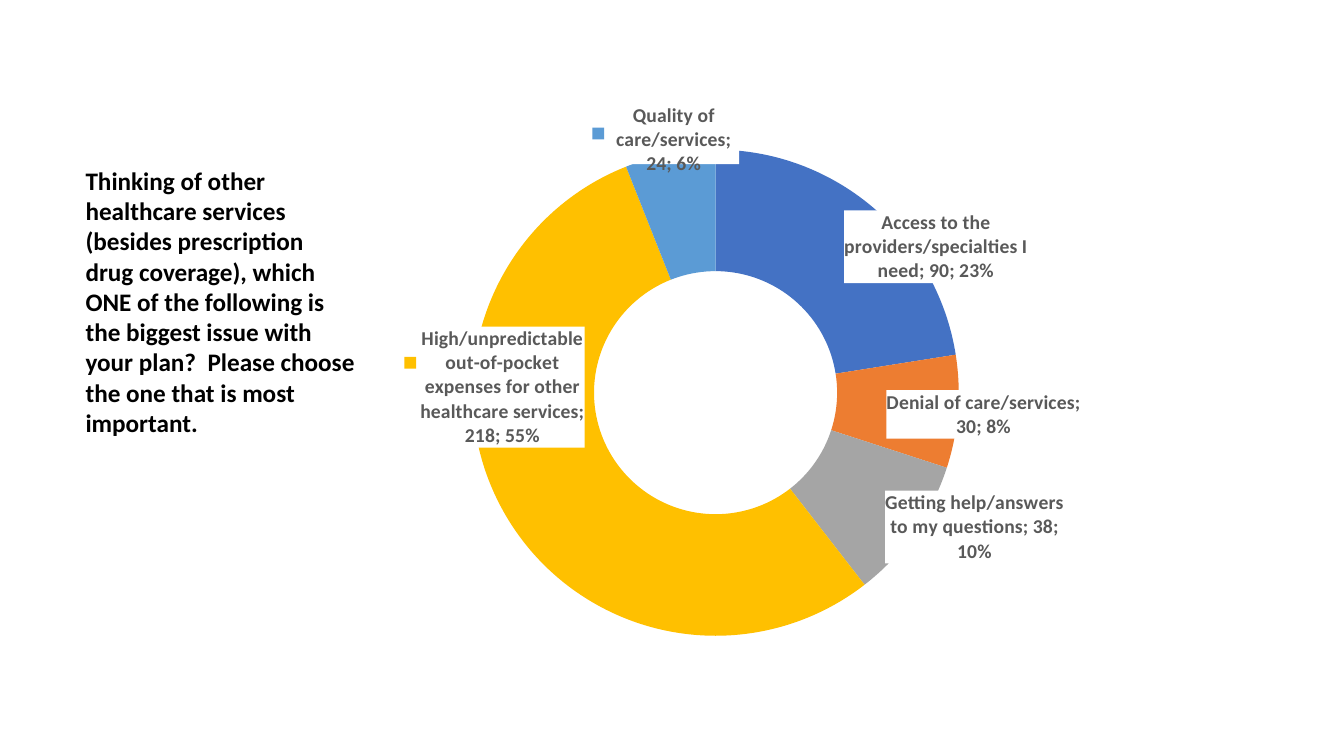
"""Build a slide with a survey question and a doughnut chart of its answers."""
import pptx
import pptx.chart.data
import pptx.dml.color
import pptx.enum.chart
import pptx.enum.text
import pptx.oxml
import pptx.oxml.ns
import pptx.util

FONT = "Calibri"
COLORS = {
    "text": "000000", "label": "595959", "label_fill": "FFFFFF",
    "blue": "4472C4", "orange": "ED7D31", "gray": "A5A5A5",
    "gold": "FFC000", "sky": "5B9BD5",
}
QUESTION = (
    "Thinking of other healthcare services (besides prescription drug coverage), "
    "which ONE of the following is the biggest issue with your plan?  "
    "Please choose the one that is most important."
)
QUESTION_BOX = (0.75, 1.59, 2.89, 2.83)
CHART_BOX = (3.13, 0.09, 7.78, 7.32)
PLOT_AREA = {"x": 0.2, "y": 0.15, "w": 0.62, "h": 0.74}
# answer, count, color, label offset, label size, legend key
ANSWERS = [
    ("Access to the providers/specialties I need", 90, "blue", (0.13, -0.01), (0.24, 0.1), 0),
    ("Denial of care/services", 30, "orange", (0.11, 0.01), (0.25, 0.07), 0),
    ("Getting help/answers to my questions", 38, "gray", (0.14, 0.04), (0.23, 0.1), 0),
    ("High/unpredictable out-of-pocket expenses for other healthcare services", 218, "gold",
     (-0.08, -0.13), (0.25, 0.13), 1),
    ("Quality of care/services", 24, "sky", (-0.02, -0.1), (0.16, 0.08), 1),
]
CHART_NS = pptx.oxml.ns.nsdecls("c", "a")
LABEL_FLAGS = {"showVal": 1, "showCatName": 1, "showSerName": 0, "showPercent": 1,
               "showBubbleSize": 0}
EXTENSION_ID = "{CE6537A1-D6FC-4f65-9D91-7224C49458BB}"
EXTENSION_NS = 'xmlns:c15="http://schemas.microsoft.com/office/drawing/2012/chart"'


def color(name):
    return pptx.dml.color.RGBColor.from_string(COLORS[name])


def format_font(font, size, color_name, bold):
    font.name = FONT
    font.size = pptx.util.Pt(size)
    font.bold = bold
    font.color.rgb = color(color_name)


def inches(box):
    return [pptx.util.Inches(length) for length in box]


def value_tags(values):
    return "".join(f'<c:{name} val="{value}"/>' for name, value in values.items())


def solid_fill(name):
    return f'<a:solidFill><a:srgbClr val="{COLORS[name]}"/></a:solidFill>'


def label_element(index, offset, size, key):
    position = value_tags({"x": offset[0], "y": offset[1]})
    extent = value_tags({"w": size[0], "h": size[1]})
    flags = value_tags({"showLegendKey": key, **LABEL_FLAGS})
    font = (f'<a:defRPr sz="1400" b="1">{solid_fill("label")}'
            f'<a:latin typeface="{FONT}"/></a:defRPr>')
    parts = [
        f'<c:dLbl {CHART_NS}><c:idx val="{index}"/>',
        f"<c:layout><c:manualLayout>{position}</c:manualLayout></c:layout>",
        f'<c:spPr>{solid_fill("label_fill")}<a:ln><a:noFill/></a:ln></c:spPr>',
        '<c:txPr><a:bodyPr wrap="square" anchor="ctr"/><a:lstStyle/>',
        f'<a:p><a:pPr>{font}</a:pPr><a:endParaRPr lang="en-US"/></a:p></c:txPr>',
        f"{flags}<c:separator>; </c:separator>",
        f'<c:extLst><c:ext uri="{EXTENSION_ID}" {EXTENSION_NS}>',
        f"<c15:layout><c:manualLayout>{extent}</c:manualLayout></c15:layout>",
        "</c:ext></c:extLst></c:dLbl>",
    ]
    return pptx.oxml.parse_xml("".join(parts))


def add_question(slide):
    frame = slide.shapes.add_textbox(*inches(QUESTION_BOX)).text_frame
    frame.word_wrap = True
    frame.auto_size = pptx.enum.text.MSO_AUTO_SIZE.SHAPE_TO_FIT_TEXT
    run = frame.paragraphs[0].add_run()
    run.text = QUESTION
    format_font(run.font, 18, "text", True)


def place_plot(chart):
    plot_area = chart._chartSpace.find(".//" + pptx.oxml.ns.qn("c:plotArea"))
    for layout in plot_area.findall(pptx.oxml.ns.qn("c:layout")):
        plot_area.remove(layout)
    settings = value_tags({"layoutTarget": "inner", "xMode": "edge", "yMode": "edge", **PLOT_AREA})
    plot_area.insert(0, pptx.oxml.parse_xml(
        f"<c:layout {CHART_NS}><c:manualLayout>{settings}</c:manualLayout></c:layout>"))


def add_answer_chart(slide):
    data = pptx.chart.data.CategoryChartData()
    data.categories = [answer[0] for answer in ANSWERS]
    data.add_series("Series 1", [answer[1] for answer in ANSWERS])
    chart = slide.shapes.add_chart(
        pptx.enum.chart.XL_CHART_TYPE.DOUGHNUT, *inches(CHART_BOX), data).chart
    chart.has_title = False
    chart.has_legend = False
    format_font(chart.font, 12, "text", False)
    place_plot(chart)
    chart.plots[0].vary_by_categories = True
    series = chart.plots[0].series[0]
    labels = series.data_labels
    labels.show_value = labels.show_category_name = labels.show_percentage = True
    format_font(labels.font, 14, "label", True)
    for index, (_, _, color_name, offset, size, key) in enumerate(ANSWERS):
        point = series.points[index]
        point.format.fill.solid()
        point.format.fill.fore_color.rgb = color(color_name)
        point.format.line.fill.background()
        labels._element.insert(index, label_element(index, offset, size, key))


def main():
    presentation = pptx.Presentation()
    presentation.slide_width = pptx.util.Inches(13.33)
    presentation.slide_height = pptx.util.Inches(7.5)
    slide = presentation.slides.add_slide(presentation.slide_layouts[6])
    add_answer_chart(slide)
    add_question(slide)
    presentation.save("out.pptx")


if __name__ == "__main__":
    main()
